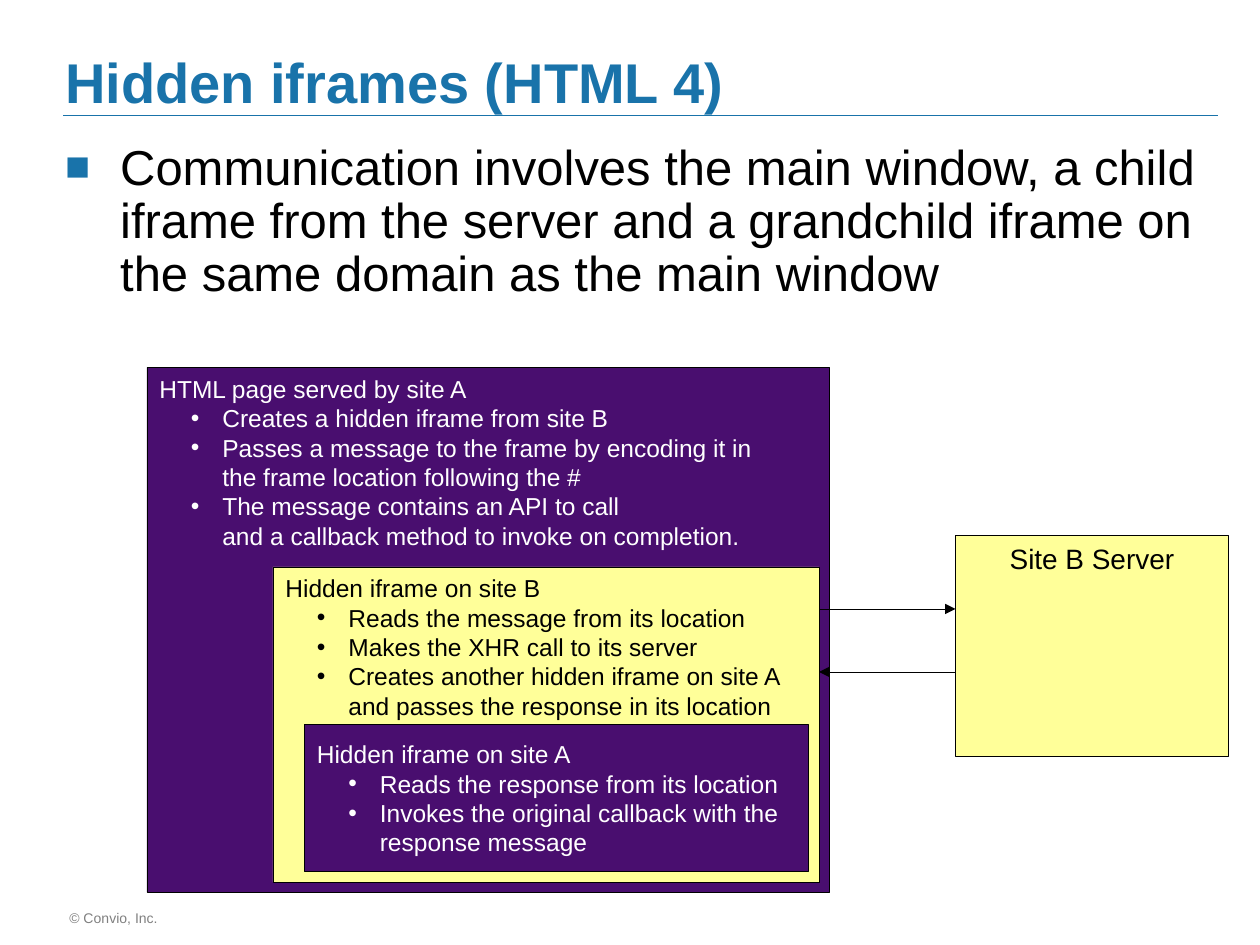
from copy import deepcopy

from pptx import Presentation
from pptx.dml.color import RGBColor
from pptx.enum.shapes import MSO_CONNECTOR, MSO_SHAPE
from pptx.enum.text import MSO_ANCHOR, MSO_AUTO_SIZE, PP_ALIGN
from pptx.oxml.ns import qn
from pptx.oxml.xmlchemy import OxmlElement
from pptx.util import Pt

LINE = MSO_CONNECTOR.STRAIGHT
RECT = MSO_SHAPE.RECTANGLE
TOP, MIDDLE, BOTTOM = MSO_ANCHOR.TOP, MSO_ANCHOR.MIDDLE, MSO_ANCHOR.BOTTOM
LEFT, CENTER = PP_ALIGN.LEFT, PP_ALIGN.CENTER
FIXED = MSO_AUTO_SIZE.NONE

BLUE = RGBColor(0x19, 0x73, 0xAA)
PURPLE = RGBColor(0x49, 0x0E, 0x6F)
YELLOW = RGBColor(0xFF, 0xFF, 0x99)
BLACK = RGBColor(0, 0, 0)
WHITE = RGBColor(0xFF, 0xFF, 0xFF)
GRAY = RGBColor(0x80, 0x80, 0x80)

PAGE = ["Creates a hidden iframe from site B",
        "Passes a message to the frame by encoding it in\nthe frame location following the #",
        "The message contains an API to call\nand a callback method to invoke on completion."]
CHILD = ["Reads the message from its location",
         "Makes the XHR call to its server",
         "Creates another hidden iframe on site A\nand passes the response in its location"]
GRAND = ["Reads the response from its location",
         "Invokes the original callback with the\nresponse message"]


def set_all(thing, values):
    for name, value in values.items():
        setattr(thing, name, value)


def place(shape, left, top, width, height):
    set_all(shape, {"left": Pt(left), "top": Pt(top),
                    "width": Pt(width), "height": Pt(height)})


def add_mark(para, char, left, hang, color=None, scale=100):
    props = para._p.get_or_add_pPr()
    props.set("marL", str(Pt(left)))
    props.set("indent", str(-Pt(hang)))
    if color is not None:
        tint = OxmlElement("a:buClr")
        rgb = OxmlElement("a:srgbClr")
        rgb.set("val", str(color))
        tint.append(rgb)
        props.append(tint)
    for tag, key, value in (("a:buSzPct", "val", str(scale * 1000)),
                            ("a:buFont", "typeface", "Arial"),
                            ("a:buChar", "char", char)):
        item = OxmlElement(tag)
        item.set(key, value)
        props.append(item)


def write(para, text, size, color, align=LEFT, bold=False):
    para.text = text
    set_all(para, {"alignment": align, "space_before": Pt(0)})
    for run in para.runs:
        set_all(run.font, {"name": "Arial", "size": Pt(size), "bold": bold})
        run.font.color.rgb = color
    for stop in para._p.findall(qn("a:br")):
        stop.append(deepcopy(para.runs[0]._r.rPr))


def add_title(slide, text):
    title = slide.shapes.title
    place(title, 30, 24, 660, 45)
    set_all(title.text_frame, {"vertical_anchor": BOTTOM, "auto_size": FIXED})
    write(title.text_frame.paragraphs[0], text, 32, BLUE, bold=True)


def add_body(slide, text):
    body = slide.placeholders[1]
    place(body, 30, 78, 660, 109.5)
    set_all(body.text_frame, {"vertical_anchor": TOP, "auto_size": FIXED})
    para = body.text_frame.paragraphs[0]
    add_mark(para, "■", 31.5, 31.5, BLUE, 85)
    write(para, text, 28, BLACK)
    para.line_spacing = 0.9


def add_box(slide, area, fill, color, head, points=(), size=14,
            align=LEFT, anchor=TOP):
    box = slide.shapes.add_shape(RECT, *map(Pt, area))
    box.shadow.inherit = False
    box.fill.solid()
    box.fill.fore_color.rgb = fill
    box.line.color.rgb = BLACK
    box.line.width = Pt(0.25)
    frame = box.text_frame
    set_all(frame, {"word_wrap": True, "vertical_anchor": anchor})
    write(frame.paragraphs[0], head, size, color, align)
    for point in points:
        para = frame.add_paragraph()
        para.level = 1
        add_mark(para, "•", 36, 18)
        write(para, point, size, color)


def add_line(slide, start, end, color, width, arrow=False):
    line = slide.shapes.add_connector(LINE, *map(Pt, start + end))
    line.line.color.rgb = color
    line.line.width = Pt(width)
    if arrow:
        tip = OxmlElement("a:tailEnd")
        tip.set("type", "triangle")
        line.line._get_or_add_ln().append(tip)
    line._element.spPr.append(OxmlElement("a:effectLst"))


def add_foot(slide, text):
    box = slide.shapes.add_textbox(*map(Pt, (36, 516, 62, 17.5)))
    set_all(box.text_frame, {"margin_left": Pt(3.6), "word_wrap": False})
    write(box.text_frame.paragraphs[0], text, 8, GRAY)


def main():
    deck = Presentation()
    set_all(deck, {"slide_width": Pt(720), "slide_height": Pt(540)})
    slide = deck.slides.add_slide(deck.slide_layouts[1])
    add_foot(slide, "© Convio, Inc.")
    add_line(slide, (36, 66), (696, 66), BLUE, 1)
    add_title(slide, "Hidden iframes (HTML 4)")
    add_body(slide, "Communication involves the main window, a child iframe from "
             "the server and a grandchild iframe on the same domain as the main window")
    add_box(slide, (84, 210, 390, 300), PURPLE, WHITE, "HTML page served by site A", PAGE)
    add_box(slide, (156, 324, 312, 180), YELLOW, BLACK, "Hidden iframe on site B", CHILD)
    add_box(slide, (174, 414, 288, 84), PURPLE, WHITE, "Hidden iframe on site A", GRAND,
            anchor=MIDDLE)
    add_box(slide, (546, 306, 156, 126), YELLOW, BLACK, "Site B Server", size=16, align=CENTER)
    add_line(slide, (468, 348), (546, 348), BLACK, 0.25, True)
    add_line(slide, (546, 384), (468, 384), BLACK, 0.25, True)
    deck.save("out.pptx")


if __name__ == "__main__":
    main()
